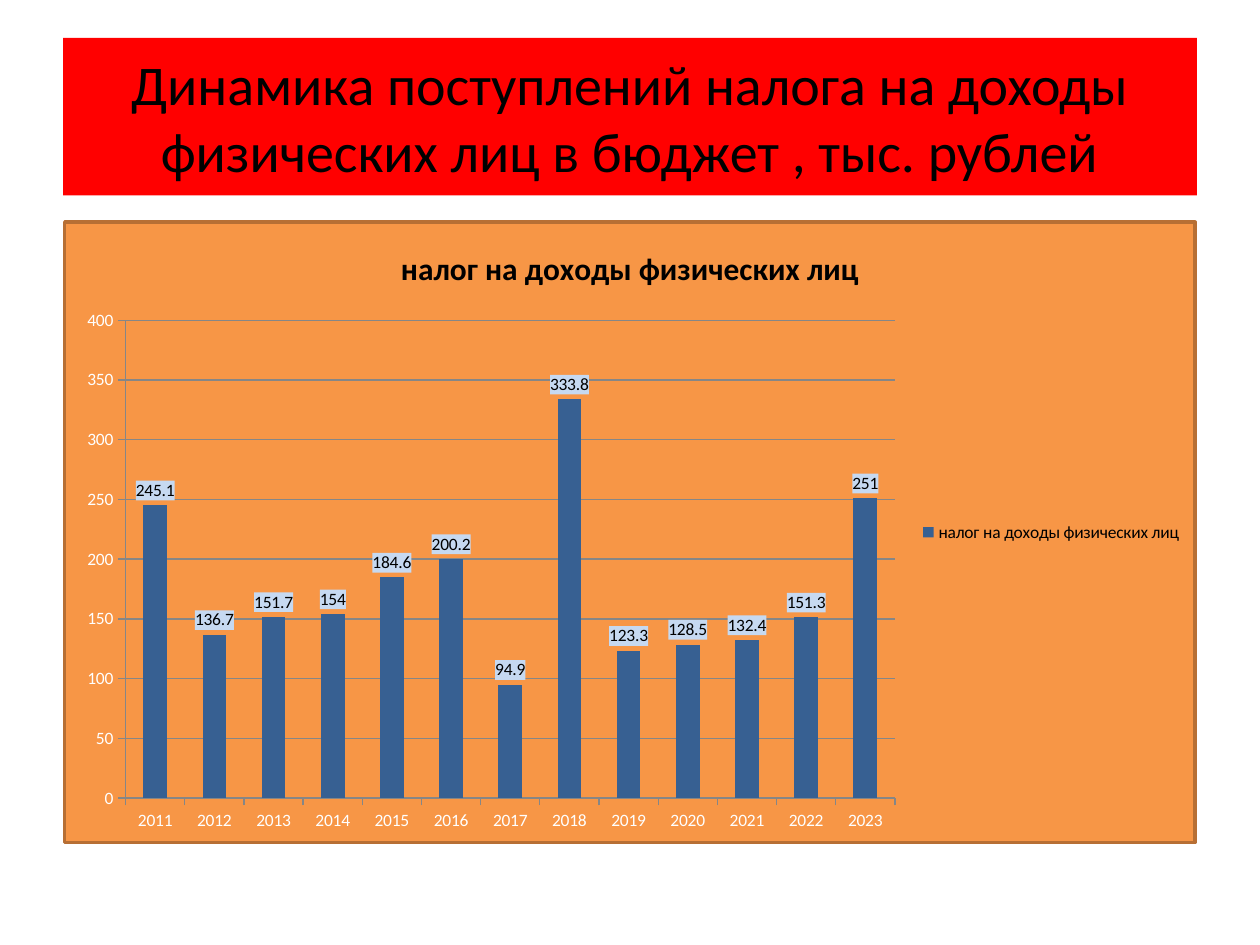
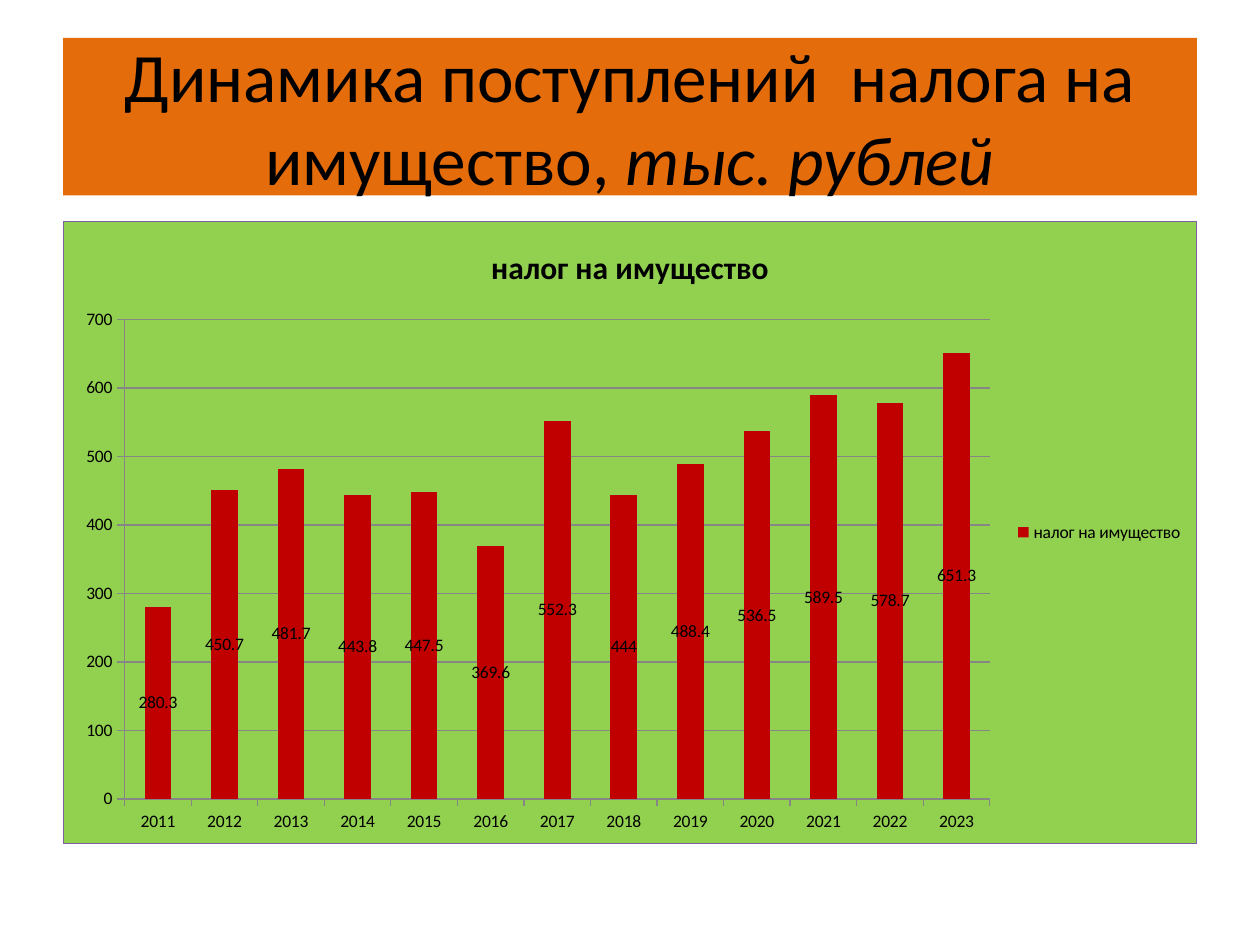
from lxml import etree
from pptx import Presentation
from pptx.chart import data
from pptx.dml import color
from pptx.enum import chart as ch, text
from pptx.oxml import ns
from pptx.util import Pt

FONT = "Calibri"
BLACK, WHITE, GRID = "000000", "FFFFFF", "868686"
YEARS = [str(year) for year in range(2011, 2024)]


def rgb(value):
    return color.RGBColor.from_string(value)


def shape_props(fill, line=None, width=0):
    """Make a c:spPr with a solid fill and an optional border."""
    solid = '<a:solidFill><a:srgbClr val="%s"/></a:solidFill>'
    border = f'<a:ln w="{Pt(width)}">{solid % line}</a:ln>' if line else ""
    return etree.fromstring(
        f'<c:spPr {ns.nsdecls("c", "a")}>{solid % fill}{border}</c:spPr>')


slides = [
    dict(title=[("Динамика поступлений налога на доходы физических лиц в бюджет , тыс. рублей", False)],
         size=32, band="FF0000", name="налог на доходы физических лиц",
         values=[245.1, 136.7, 151.7, 154, 184.6, 200.2, 94.9, 333.8, 123.3, 128.5, 132.4, 151.3, 251],
         kind=ch.XL_CHART_TYPE.COLUMN_CLUSTERED, overlap=0, bars="376092",
         area=("F79646", "B76F34", 2), axis_text=WHITE,
         label_fill="C6D9F1", label_pos=ch.XL_LABEL_POSITION.OUTSIDE_END),
    dict(title=[("Динамика поступлений  налога на имущество, ", False), ("тыс. рублей", True)],
         size=39.6, band="E46C0A", name="налог на имущество",
         values=[280.3, 450.7, 481.7, 443.8, 447.5, 369.6, 552.3, 444, 488.4, 536.5, 589.5, 578.7, 651.3],
         kind=ch.XL_CHART_TYPE.COLUMN_STACKED, overlap=100, bars="C00000",
         area=("92D050", "7D60A0", 0.75), axis_text=BLACK,
         label_fill=None, label_pos=ch.XL_LABEL_POSITION.CENTER),
]

prs = Presentation()
prs.slide_width, prs.slide_height = Pt(720), Pt(540)

for d in slides:
    s = prs.slides.add_slide(prs.slide_layouts[5])

    # Title band
    sp = s.shapes.title
    sp.left, sp.top, sp.width, sp.height = Pt(36), Pt(21.6), Pt(648), Pt(90)
    sp.fill.solid()
    sp.fill.fore_color.rgb = rgb(d["band"])
    tf = sp.text_frame
    tf.word_wrap = True
    tf.auto_size = text.MSO_AUTO_SIZE.NONE
    tf.vertical_anchor = text.MSO_ANCHOR.MIDDLE
    p = tf.paragraphs[0]
    p.alignment = text.PP_ALIGN.CENTER
    for words, italic in d["title"]:
        r = p.add_run()
        r.text = words
        r.font.name, r.font.size, r.font.italic = FONT, Pt(d["size"]), italic
        r.font.color.rgb = rgb(BLACK)

    # Chart and its background
    cd = data.CategoryChartData()
    cd.categories = YEARS
    cd.add_series(d["name"], d["values"])
    chart = s.shapes.add_chart(d["kind"], Pt(36), Pt(126), Pt(648), Pt(356.4), cd).chart
    chart.font.name, chart.font.size = FONT, Pt(10)
    chart.font.color.rgb = rgb(d["axis_text"])
    chart._chartSpace.find(ns.qn("c:chart")).addnext(shape_props(*d["area"]))

    # Chart title and legend
    chart.has_title = True
    tf = chart.chart_title.text_frame
    tf.text = d["name"]
    r = tf.paragraphs[0].runs[0]
    r.font.name, r.font.size, r.font.bold = FONT, Pt(18), True
    r.font.color.rgb = rgb(BLACK)
    chart.chart_title.include_in_layout = False
    chart.has_legend = True
    chart.legend.position = ch.XL_LEGEND_POSITION.RIGHT
    chart.legend.include_in_layout = False
    chart.legend.font.name, chart.legend.font.size = FONT, Pt(10)
    chart.legend.font.color.rgb = rgb(BLACK)

    # Axes
    chart.value_axis.has_major_gridlines = True
    for line in (chart.category_axis.format.line, chart.value_axis.format.line,
                 chart.value_axis.major_gridlines.format.line):
        line.color.rgb = rgb(GRID)
        line.width = Pt(0.75)
    for axis in (chart.category_axis, chart.value_axis):
        axis.major_tick_mark = ch.XL_TICK_MARK.OUTSIDE

    # Columns and value labels
    plot = chart.plots[0]
    plot.vary_by_categories = False
    plot.gap_width, plot.overlap = 150, d["overlap"]
    series = plot.series[0]
    series.format.fill.solid()
    series.format.fill.fore_color.rgb = rgb(d["bars"])
    labels = series.data_labels
    labels.show_value = True
    labels.position = d["label_pos"]
    labels.font.name, labels.font.size = FONT, Pt(10)
    labels.font.color.rgb = rgb(BLACK)
    if d["label_fill"]:
        labels._element.find(ns.qn("c:txPr")).addprevious(shape_props(d["label_fill"]))

prs.save("out.pptx")
